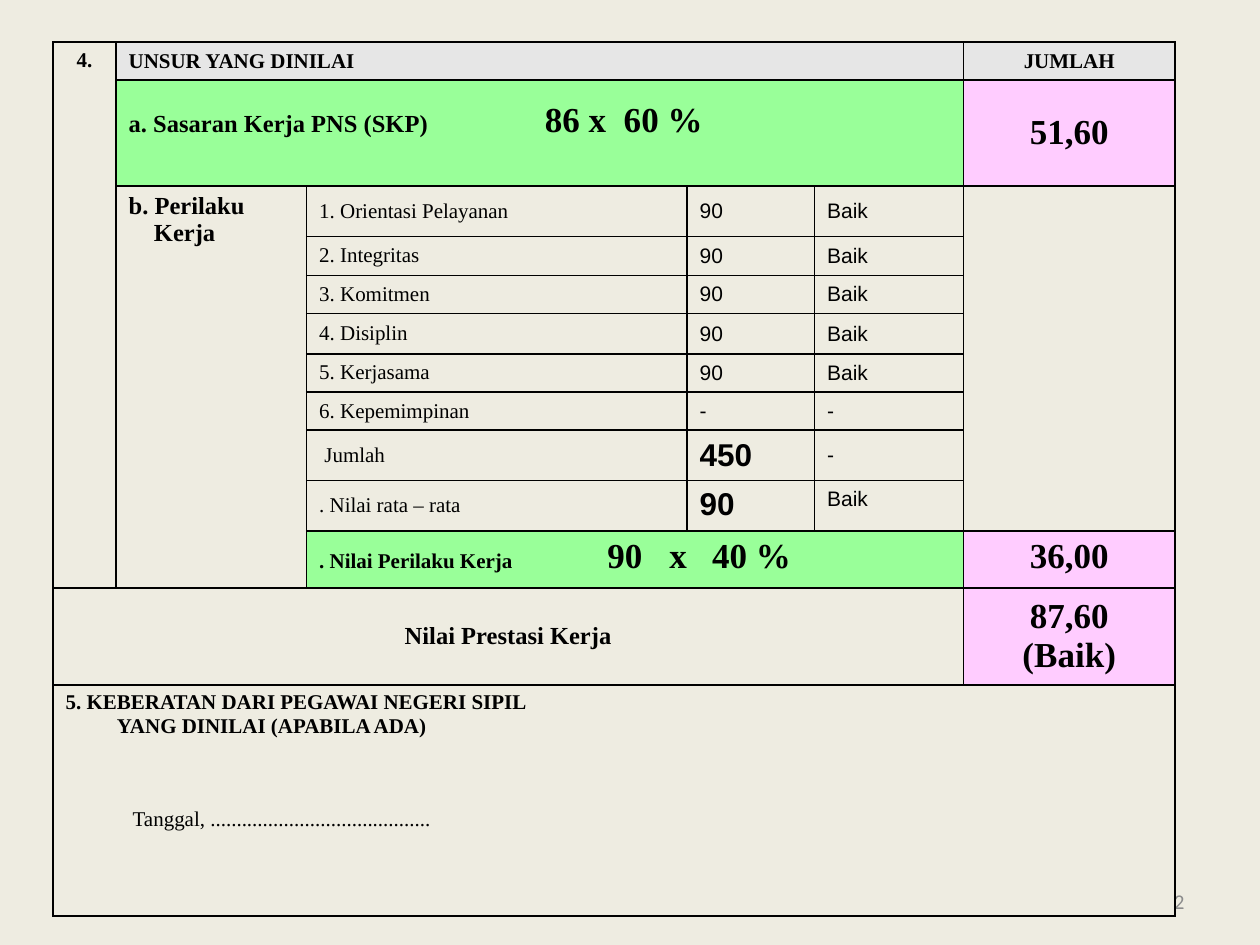
from lxml import etree
from pptx import Presentation
from pptx import util as u
from pptx.dml.color import RGBColor
from pptx.enum import text
from pptx.oxml import ns

SERIF, SANS = "Times New Roman", "Arial"
GREEN, PINK, GREY = "99FF99", "FFCCFF", "E6E6E6"
MIDDLE, TOP = text.MSO_ANCHOR.MIDDLE, text.MSO_ANCHOR.TOP
LEFT, CENTER, RIGHT = text.PP_ALIGN.LEFT, text.PP_ALIGN.CENTER, text.PP_ALIGN.RIGHT
COLS = [1.27, 3.84, 7.67, 2.57, 3.0, 4.27]
ROWS = [0.72, 2.14, 1.01, 0.79, 0.77, 0.81, 0.77, 0.77, 0.97, 0.97, 1.15, 1.83, 4.66]
BEHAVIOURS = [
    ("1. Orientasi Pelayanan", "90", "Baik"),
    ("2. Integritas", "90", "Baik"),
    ("3. Komitmen", "90", "Baik"),
    ("4. Disiplin", "90", "Baik"),
    ("5. Kerjasama", "90", "Baik"),
    ("6. Kepemimpinan", "-", "-"),
    (" Jumlah", "450", "-"),
    (". Nilai rata – rata", "90", "Baik"),
]


def rgb(value):
    """Return the colour for a hex string."""
    return RGBColor.from_string(value)


def sub(parent, tag, **attrs):
    """Append a DrawingML child element."""
    return etree.SubElement(parent, ns.qn(tag), {k: str(v) for k, v in attrs.items()})


def write(p, words, size=12, font=SERIF, bold=False, color="000000", align=LEFT,
          indent=0, hanging=0, before=0, tabs=()):
    """Add a formatted run to a paragraph and set the paragraph's layout."""
    r = p.add_run()
    r.text = words
    r.font.size, r.font.name, r.font.bold = u.Pt(size), font, bold
    r.font.color.rgb = rgb(color)
    p.alignment = align
    if before:
        p.space_before = u.Pt(before)
    pPr = p._p.get_or_add_pPr()
    if indent:
        pPr.set("marL", str(u.Cm(indent)))
        pPr.set("indent", str(-u.Cm(hanging)))
    if tabs:
        stops = sub(pPr, "a:tabLst")
        for stop in tabs:
            sub(stops, "a:tab", pos=u.Cm(stop), algn="l")


def style_cell(cell):
    """Give a cell thin black borders and no fill."""
    tcPr = cell._tc.get_or_add_tcPr()
    for side in "LRTB":
        ln = sub(tcPr, f"a:ln{side}", w=u.Pt(1))
        sub(sub(ln, "a:solidFill"), "a:srgbClr", val="000000")
    cell.fill.background()


def put(cell, words, fill=None, anchor=MIDDLE, **fmt):
    """Fill a cell and write its first paragraph."""
    cell.vertical_anchor = anchor
    if fill:
        cell.fill.solid()
        cell.fill.fore_color.rgb = rgb(fill)
    p = cell.text_frame.paragraphs[0]
    write(p, words, **fmt)
    return p


def add_grid(slide, left, top):
    """Add the empty assessment table with its merged cells."""
    frame = slide.shapes.add_table(len(ROWS), len(COLS), u.Cm(left), u.Cm(top),
                                   u.Cm(sum(COLS)), u.Cm(sum(ROWS)))
    tbl = frame.table
    tbl.first_row = tbl.horz_banding = False
    for col, width in zip(tbl.columns, COLS):
        col.width = u.Cm(width)
    for row, height in zip(tbl.rows, ROWS):
        row.height = u.Cm(height)
    for cell in tbl.iter_cells():
        style_cell(cell)
    for r1, c1, r2, c2 in [(0, 0, 10, 0), (0, 1, 0, 4), (1, 1, 1, 4), (2, 1, 10, 1),
                           (2, 5, 9, 5), (10, 2, 10, 4), (11, 0, 11, 4), (12, 0, 12, 5)]:
        tbl.cell(r1, c1).merge(tbl.cell(r2, c2))
    return tbl


def fill_targets(tbl):
    """Write the heading row and the work target row."""
    put(tbl.cell(0, 0), "4.", anchor=TOP, bold=True, align=CENTER)
    put(tbl.cell(0, 1), "UNSUR YANG DINILAI", GREY, bold=True)
    put(tbl.cell(0, 5), "JUMLAH", GREY, bold=True, align=CENTER)
    target = tbl.cell(1, 1)
    target.margin_bottom = u.Cm(0.64)
    p = put(target, "a. Sasaran Kerja PNS (SKP)\t", GREEN, size=14, bold=True, tabs=(8.39, 9.98))
    write(p, "86 x\t60 %", size=20, bold=True)
    put(tbl.cell(1, 5), "51,60", PINK, size=20, bold=True, align=CENTER)


def fill_behaviour(tbl):
    """Write the work behaviour scores and their weighted value."""
    put(tbl.cell(2, 1), "b. Perilaku Kerja", anchor=TOP, size=14, bold=True,
        indent=0.51, hanging=0.51)
    for i, (label, score, grade) in enumerate(BEHAVIOURS, 2):
        total = i >= 8
        anchor = TOP if i == 9 else MIDDLE
        put(tbl.cell(i, 2), label)
        put(tbl.cell(i, 3), score, anchor=anchor, font=SANS, size=18 if total else 12, bold=total)
        put(tbl.cell(i, 4), grade, anchor=anchor, font=SANS)
    p = put(tbl.cell(10, 2), ". Nilai Perilaku Kerja\t", GREEN, TOP, bold=True,
            tabs=(5.81, 7.06, 7.92))
    write(p, "90\tx\t40 %", size=20, bold=True)
    put(tbl.cell(10, 5), "36,00", PINK, TOP, size=20, bold=True, align=CENTER)


def fill_result(tbl):
    """Write the final score and the objection box."""
    put(tbl.cell(11, 0), "Nilai Prestasi Kerja", size=14, bold=True, align=CENTER)
    score = tbl.cell(11, 5)
    put(score, "87,60", PINK, size=20, bold=True, align=CENTER)
    write(score.text_frame.add_paragraph(), "(Baik)", size=20, bold=True, align=CENTER)
    box = tbl.cell(12, 0)
    put(box, "5. KEBERATAN DARI PEGAWAI NEGERI SIPIL", anchor=TOP, bold=True)
    write(box.text_frame.add_paragraph(), "YANG DINILAI (APABILA ADA)", bold=True, indent=1.03)
    write(box.text_frame.add_paragraph(), "Tanggal, ..........................................",
          indent=1.35, before=40)


def add_page_number(slide, left, top, width, height):
    """Add the grey page number."""
    tf = slide.shapes.add_textbox(*map(u.Cm, (left, top, width, height))).text_frame
    tf.word_wrap = True
    tf.vertical_anchor = MIDDLE
    write(tf.paragraphs[0], "2", font="Calibri", color="8C8C8C", align=RIGHT)


def main():
    """Build and save the slide."""
    prs = Presentation()
    prs.slide_width, prs.slide_height = u.Cm(25.4), u.Cm(19.05)
    s = prs.slides.add_slide(prs.slide_layouts[6])
    s.background.fill.solid()
    s.background.fill.fore_color.rgb = rgb("EEECE1")
    add_page_number(s, 18.2, 17.66, 5.93, 1.01)
    tbl = add_grid(s, 1.07, 0.85)
    fill_targets(tbl)
    fill_behaviour(tbl)
    fill_result(tbl)
    prs.save("out.pptx")


if __name__ == "__main__":
    main()
